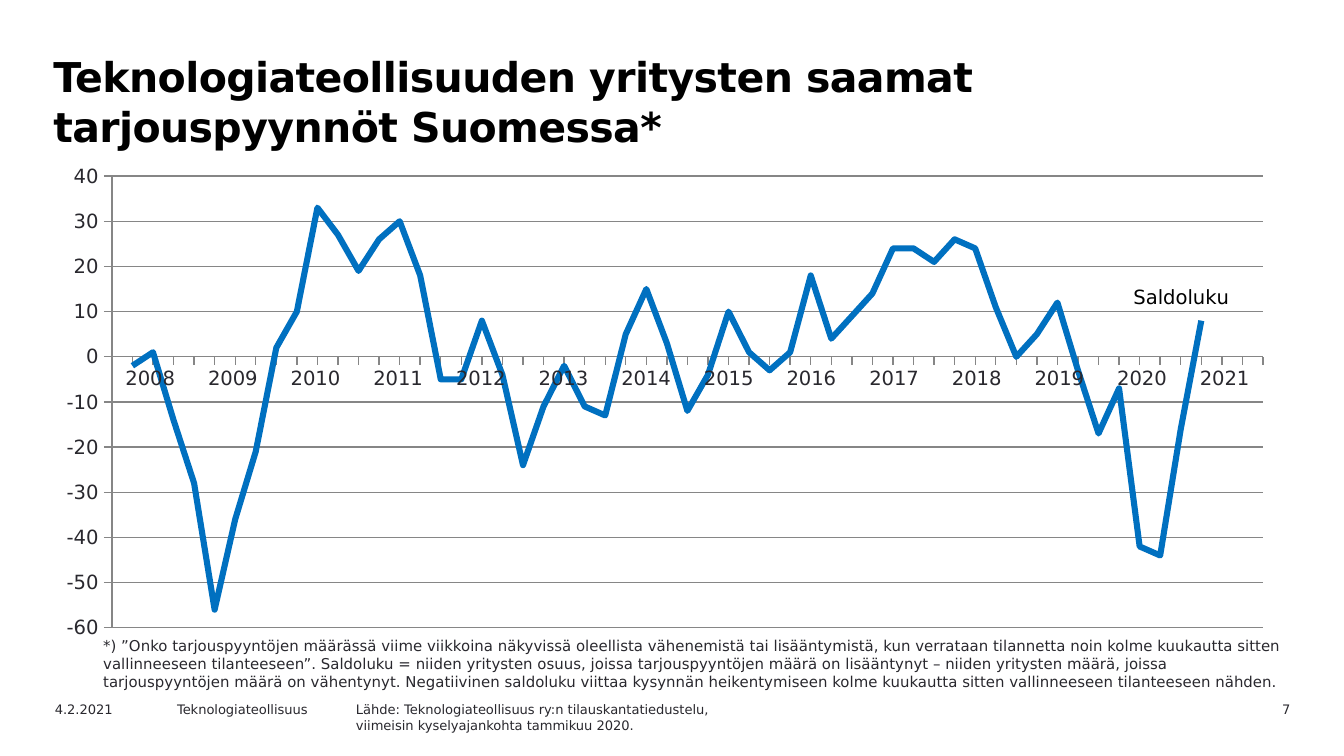
from lxml.etree import SubElement
from pptx import Presentation
from pptx.chart.data import CategoryChartData
from pptx.dml.color import RGBColor
from pptx.enum.chart import XL_CHART_TYPE, XL_MARKER_STYLE, XL_TICK_LABEL_POSITION, XL_TICK_MARK
from pptx.enum.text import PP_ALIGN
from pptx.oxml import parse_xml
from pptx.oxml.ns import nsdecls, qn
from pptx.util import Pt

FONT = "DejaVu Sans"
BLACK = RGBColor(0x00, 0x00, 0x00)
INK = RGBColor(0x29, 0x28, 0x2E)
BLUE = RGBColor(0x00, 0x70, 0xC0)
GREY = RGBColor(0x86, 0x86, 0x86)
PLAIN_TABLE_STYLE = "{2D5ABB26-0587-4C30-8999-92F81FD0307C}"

HEADING = "Teknologiateollisuuden yritysten saamat tarjouspyynnöt Suomessa*"
FOOTNOTE = (
    "*) ”Onko tarjouspyyntöjen määrässä viime viikkoina näkyvissä oleellista vähenemistä tai "
    "lisääntymistä, kun verrataan tilannetta noin kolme kuukautta sitten vallinneeseen "
    "tilanteeseen”. Saldoluku = niiden yritysten osuus, joissa tarjouspyyntöjen määrä on "
    "lisääntynyt – niiden yritysten määrä, joissa tarjouspyyntöjen määrä on vähentynyt. "
    "Negatiivinen saldoluku viittaa kysynnän heikentymiseen kolme kuukautta sitten "
    "vallinneeseen tilanteeseen nähden."
)
SOURCE = [
    "Lähde: Teknologiateollisuus ry:n tilauskantatiedustelu,",
    "viimeisin kyselyajankohta tammikuu 2020.",
]
FOOTER = [
    (["4.2.2021"], 22.3, 72, PP_ALIGN.LEFT),
    (["Teknologiateollisuus"], 87.8, 102, PP_ALIGN.LEFT),
    (SOURCE, 183.6, 234, PP_ALIGN.LEFT),
    (["7"], 630.7, 67.7, PP_ALIGN.RIGHT),
]
YEARS = range(2008, 2022)
BALANCE = [
    None, -2, 1, -14, -28, -56, -36, -21, 2, 10, 33, 27, 19, 26, 30, 18, -5, -5, 8, -4,
    -24, -11, -2, -11, -13, 5, 15, 3, -12, -4, 10, 1, -3, 1, 18, 4, 9, 14, 24, 24,
    21, 26, 24, 11, 0, 5, 12, -3, -17, -7, -42, -44, -16, 8, None, None, None,
]


def style(font, size, color=INK, bold=False):
    font.name = FONT
    font.size = Pt(size)
    font.bold = bold
    font.color.rgb = color


def add_text(slide, lines, left, top, width, height, size, color=INK, bold=False,
             align=PP_ALIGN.LEFT):
    frame = slide.shapes.add_textbox(Pt(left), Pt(top), Pt(width), Pt(height)).text_frame
    frame.word_wrap = True
    frame.text = "\n".join(lines)
    for paragraph in frame.paragraphs:
        paragraph.alignment = align
        style(paragraph.font, size, color, bold)
    return frame


def manual_layout(**settings):
    parts = "".join(f'<c:{name} val="{value}"/>' for name, value in settings.items())
    return parse_xml(
        f"<c:layout {nsdecls('c')}><c:manualLayout>{parts}</c:manualLayout></c:layout>")


def set_layout(parent, index, layout):
    for old in parent.findall(qn("c:layout")):
        parent.remove(old)
    parent.insert(index, layout)


def add_balance_chart(slide):
    data = CategoryChartData()
    data.categories = [str(quarter) for quarter in range(1, len(BALANCE) + 1)]
    data.add_series("Saldoluku", BALANCE)
    chart = slide.shapes.add_chart(
        XL_CHART_TYPE.LINE, Pt(30.2), Pt(85), Pt(661), Pt(260), data).chart
    style(chart.font, 10.5)
    chart.has_legend = False
    chart.has_title = True
    label = chart.chart_title.text_frame
    label.text = "Saldoluku"
    style(label.paragraphs[0].font, 10.5, BLACK)
    title = chart.chart_title._element
    set_layout(title, 1, manual_layout(xMode="edge", yMode="edge", x=0.87, y=0.25))
    chart.chart_title.include_in_layout = True
    for overlay in title.findall(qn("c:overlay")):
        overlay.set("val", "1")

    plot = chart.plots[0]
    plot.vary_by_categories = False
    balance = plot.series[0]
    balance.smooth = False
    balance.marker.style = XL_MARKER_STYLE.NONE
    balance.format.line.color.rgb = BLUE
    balance.format.line.width = Pt(3.25)

    values, quarters = chart.value_axis, chart.category_axis
    values.minimum_scale, values.maximum_scale, values.major_unit = -60, 40, 10
    values.has_major_gridlines = True
    quarters.tick_label_position = XL_TICK_LABEL_POSITION.NONE
    for axis in (values, quarters):
        axis.major_tick_mark = XL_TICK_MARK.OUTSIDE
        axis.minor_tick_mark = XL_TICK_MARK.NONE
    for ruled in (values, quarters, values.major_gridlines):
        ruled.format.line.color.rgb = GREY
        ruled.format.line.width = Pt(0.75)
    style(values.tick_labels.font, 10.5)

    value_xml = values._element
    for old in value_xml.findall(qn("c:crossBetween")):
        value_xml.remove(old)
    value_xml.find(qn("c:crosses")).addnext(
        parse_xml(f"<c:crossBetween {nsdecls('c')} val=\"midCat\"/>"))
    set_layout(value_xml.getparent(), 0, manual_layout(
        layoutTarget="inner", xMode="edge", yMode="edge", x=0.045, y=0.036, w=0.933, h=0.931))


def add_year_row(slide):
    width = 620
    table = slide.shapes.add_table(
        1, len(YEARS), Pt(58.3), Pt(193), Pt(width), Pt(22.3)).table
    table.first_row = table.horz_banding = False
    properties = table._tbl.tblPr
    for old in properties.findall(qn("a:tableStyleId")):
        properties.remove(old)
    SubElement(properties, qn("a:tableStyleId")).text = PLAIN_TABLE_STYLE
    for column, year in enumerate(YEARS):
        table.columns[column].width = Pt(width / len(YEARS))
        cell = table.cell(0, column)
        cell.fill.background()
        cell.text = str(year)
        paragraph = cell.text_frame.paragraphs[0]
        paragraph.alignment = PP_ALIGN.CENTER
        style(paragraph.font, 10.5)


def main():
    deck = Presentation()
    deck.slide_width, deck.slide_height = Pt(720), Pt(405)
    slide = deck.slides.add_slide(deck.slide_layouts[6])

    heading = add_text(slide, [HEADING], 20.2, 22.3, 629.3, 67.7, 22, BLACK, True)
    heading.margin_left, heading.margin_top = Pt(8.4), Pt(5.5)
    heading.paragraphs[0].runs[0].font._element.set("spc", "-30")
    for lines, left, width, align in FOOTER:
        add_text(slide, lines, left, 372.2, width, 13, 7, align=align)
    add_balance_chart(slide)
    add_text(slide, [FOOTNOTE], 48.2, 337.7, 647.3, 36, 8)
    add_year_row(slide)
    deck.save("out.pptx")


if __name__ == "__main__":
    main()
